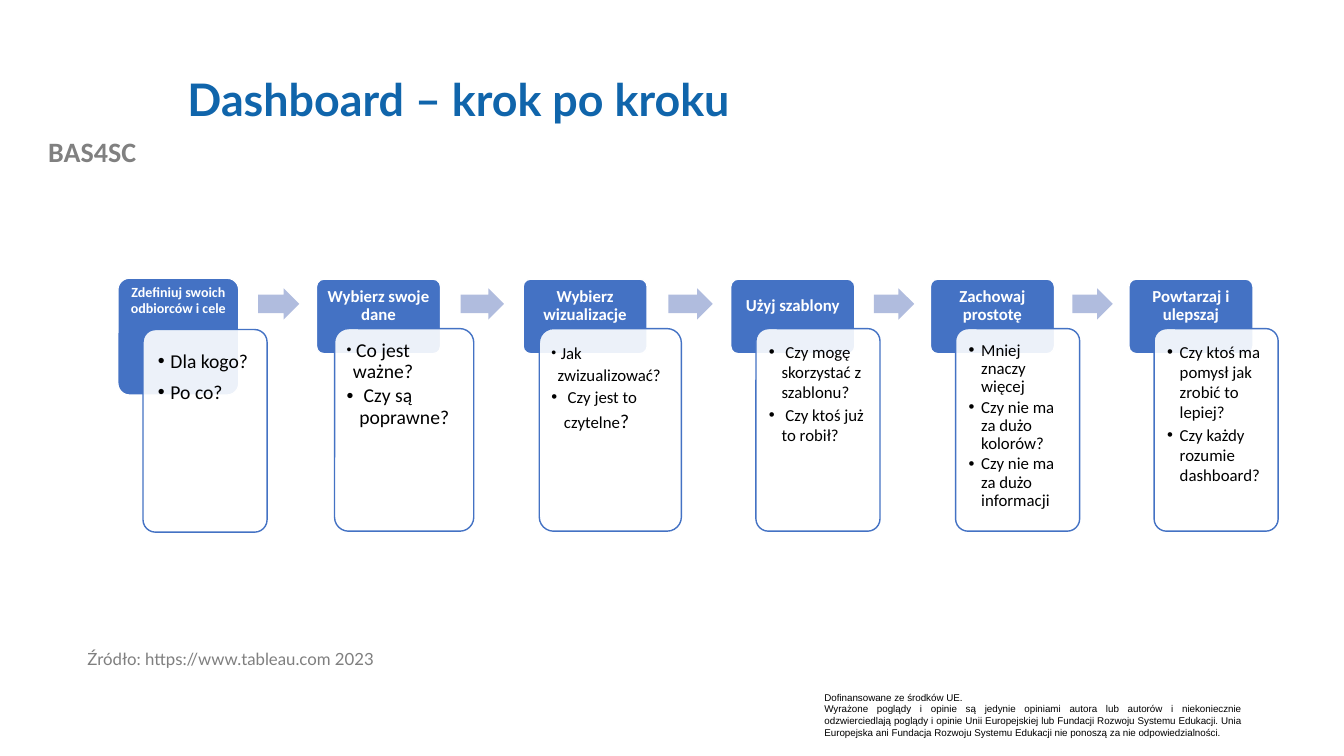
import lxml.etree
import pptx
import pptx.dml.color
import pptx.enum.shapes
import pptx.enum.text
import pptx.oxml.ns
import pptx.util

Pt = pptx.util.Pt
qn = pptx.oxml.ns.qn
SHAPE = pptx.enum.shapes.MSO_SHAPE
ALIGN = pptx.enum.text.PP_ALIGN
ANCHOR = pptx.enum.text.MSO_ANCHOR
rgb = pptx.dml.color.RGBColor.from_string

BLUE, ARROW, WHITE, BLACK = "4472C4", "B0BCDE", "FFFFFF", "000000"


def add_shape(s, kind, box, fill, line=None):
    sp = s.shapes.add_shape(kind, *map(Pt, box))
    sp.shadow.inherit = False
    sp.fill.solid()
    sp.fill.fore_color.rgb = rgb(fill)
    if line:
        sp.line.color.rgb = rgb(line)
        sp.line.width = Pt(1)
    else:
        sp.line.fill.background()
    return sp


def write(sp, paras, color, frame, para, font, indents=()):
    tf = sp.text_frame
    for name, value in {"word_wrap": True, **frame}.items():
        setattr(tf, name, value)
    for i, runs in enumerate(paras):
        p = tf.paragraphs[0] if i == 0 else tf.add_paragraph()
        if indents:
            pPr = p._p.get_or_add_pPr()
            pPr.set("marL", str(Pt(indents[i])))
            pPr.set("indent", str(-Pt(indents[i])))
            lxml.etree.SubElement(pPr, qn("a:buFont")).set("typeface", "Arial")
            lxml.etree.SubElement(pPr, qn("a:buChar")).set("char", "•")
        for name, value in para.items():
            setattr(p, name, value)
        for text, size in runs:
            r = p.add_run()
            r.text = text
            for name, value in {**font, "size": Pt(size)}.items():
                setattr(r.font, name, value)
            r.font.color.rgb = rgb(color)


prs = pptx.Presentation()
prs.slide_width, prs.slide_height = Pt(960), Pt(540)
s = prs.slides.add_slide(prs.slide_layouts[5])

title = s.shapes.title
title.left, title.top, title.width, title.height = map(Pt, (126.7, 28.8, 767.5, 87.8))
write(title, [[("Dashboard – krok po kroku", 32)]], "1065AB",
      {"vertical_anchor": ANCHOR.MIDDLE, "auto_size": pptx.enum.text.MSO_AUTO_SIZE.NONE},
      {"alignment": ALIGN.LEFT, "line_spacing": 0.9}, {"name": "Lato", "bold": True})

notes = [
    ((0, 92.2, 131.8, 31.7), ["BAS4SC"], 20, "808080",
     {"alignment": ALIGN.CENTER}, {"name": "Calibri", "bold": True}),
    ((55.4, 461.5, 360.7, 37.4), ["Źródło: https://www.tableau.com 2023"], 12, "7F7F7F",
     {"line_spacing": 0.9}, {"name": "Lato"}),
    ((581.8, 490.3, 311.8, 41), [
        "Dofinansowane ze środków UE.",
        "Wyrażone poglądy i opinie są jedynie opiniami autora lub autorów i niekoniecznie "
        "odzwierciedlają poglądy i opinie Unii Europejskiej lub Fundacji Rozwoju Systemu "
        "Edukacji. Unia Europejska ani Fundacja Rozwoju Systemu Edukacji nie ponoszą za nie "
        "odpowiedzialności."], 7, BLACK,
     {"alignment": ALIGN.JUSTIFY}, {"name": "Arial"}),
]
for box, lines, size, color, para, font in notes:
    write(s.shapes.add_textbox(*map(Pt, box)), [[(line, size)] for line in lines],
          color, {}, para, font)

# heading, size, tab left, tab height, card left, card width, inset, line spacing, gap, indents, bullets
steps = [
    ("Zdefiniuj swoich odbiorców i cele", 10, 84.2, 83.5, 102.2, 88.6, 8, 1.2, 2.1, (9, 9),
     [[("Dla kogo?", 14)], [("Po co?", 14)]]),
    ("Wybierz swoje dane", 12, 226.1, 53.3, 239, 99.4, 6, 0.9, 2.1, (4.5, 9),
     [[(" ", 10), ("Co jest ważne?", 14)], [(" Czy są poprawne?", 14)]]),
    ("Wybierz wizualizacje", 12, 373.7, 53.3, 385.2, 101.5, 6, 1.1, 0, (4.5, 9),
     [[(" ", 10), ("Jak zwizualizować?", 12)], [(" Czy jest to czytelne", 12), ("?", 14)]]),
    ("Użyj szablony", 12, 522, 53.3, 540, 88.6, 6.7, 1.0, 1.8, (9, 9),
     [[(" Czy mogę skorzystać z szablonu?", 12)], [(" Czy ktoś już to robił?", 12)]]),
    ("Zachowaj prostotę", 12, 664.6, 53.3, 682.6, 88.6, 6.7, 0.9, 1.8, (9, 9, 9),
     [[("Mniej znaczy więcej", 12)], [("Czy nie ma za dużo kolorów?", 12)],
      [("Czy nie ma za dużo informacji", 12)]]),
    ("Powtarzaj i ulepszaj", 12, 806.4, 53.3, 824.4, 88.6, 6.7, 1.0, 1.8, (9, 9),
     [[("Czy ktoś ma pomysł jak zrobić to lepiej?", 12)],
      [("Czy każdy rozumie dashboard?", 12)]]),
]
margins = ("margin_left", "margin_top", "margin_right", "margin_bottom")
for i, (head, size, x, h, cx, cw, inset, spacing, gap, indents, bullets) in enumerate(steps):
    y = 199.4 if i else 198.7
    cy = 234.7 if i else 235.4
    w = 88.6 if i else 86.4
    tab = add_shape(s, SHAPE.ROUNDED_RECTANGLE, (x, y, w, h), BLUE, WHITE)
    tab.adjustments[0] = 0.1
    pad = size / 2 + 0.5
    write(s.shapes.add_textbox(*map(Pt, (x, y, w, 35.3))), [[(head, size)]], WHITE,
          {**dict(zip(margins, map(Pt, (pad, pad, pad, pad / 2)))),
           "vertical_anchor": ANCHOR.MIDDLE if i else ANCHOR.TOP},
          {"alignment": ALIGN.CENTER, "line_spacing": 0.9}, {"name": "Calibri", "bold": True})

    card = add_shape(s, SHAPE.ROUNDED_RECTANGLE, (cx, cy, cw, 144.7), WHITE, BLUE)
    card.adjustments[0] = 0.1
    clr = card._element.spPr.find(qn("a:solidFill")).find(qn("a:srgbClr"))
    lxml.etree.SubElement(clr, qn("a:alpha")).set("val", "90000")
    write(s.shapes.add_textbox(*map(Pt, (cx + 2.6, cy + 2.6, cw - 5.2, 139))), bullets, BLACK,
          dict.fromkeys(margins, Pt(inset)),
          {"level": 1, "line_spacing": spacing, "space_after": Pt(gap)},
          {"name": "Calibri"}, indents)

for x, w in [(184.3, 29.5), (329, 31), (477.4, 31.7), (624.2, 28.8), (766.1, 28.8)]:
    arrow = add_shape(s, SHAPE.RIGHT_ARROW, (x, 205.9, w, 22.3), ARROW)
    arrow.adjustments[0] = 0.6

prs.save("out.pptx")
